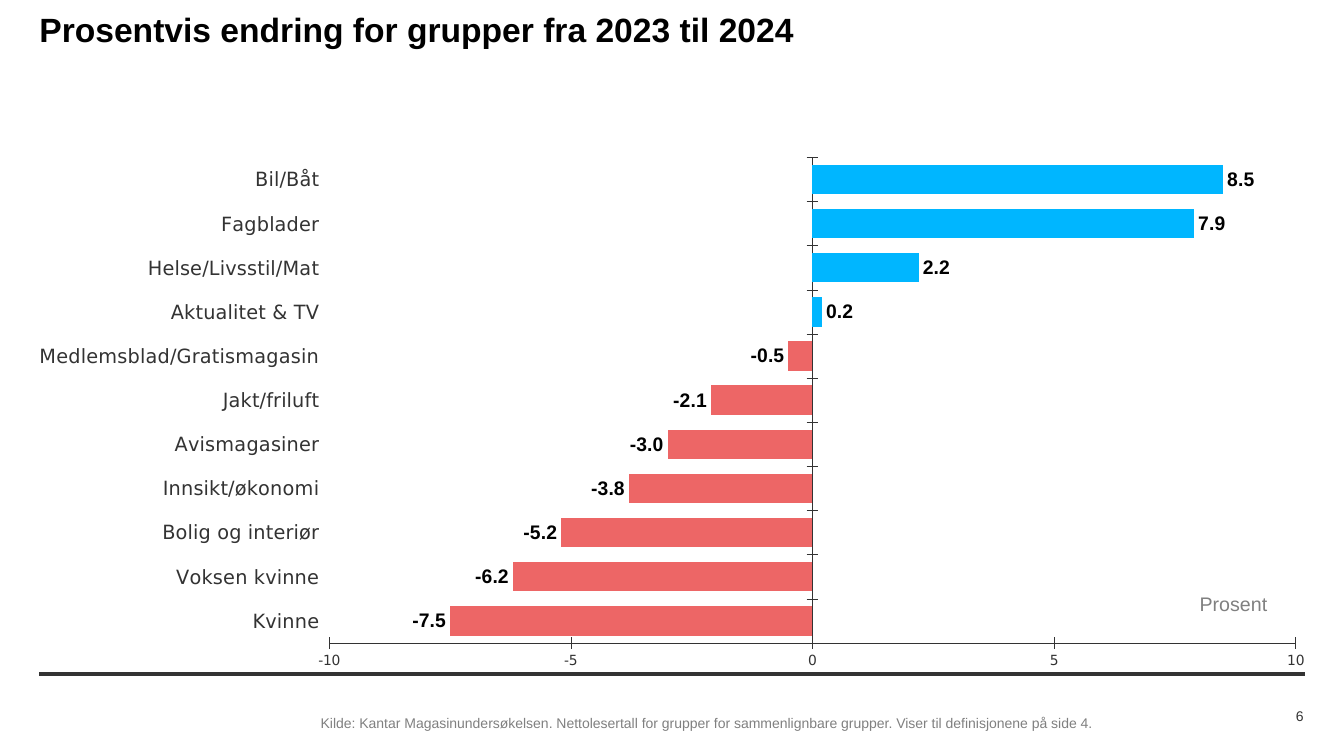
from lxml import etree
from pptx import Presentation
from pptx import util as u
from pptx.chart.data import CategoryChartData
from pptx.dml.color import RGBColor
from pptx.enum import chart as ch, shapes, text
from pptx.oxml import parse_xml
from pptx.oxml.ns import nsdecls, qn

BLACK = RGBColor(0x00, 0x00, 0x00)
DARK = RGBColor(0x33, 0x33, 0x33)
GREY = RGBColor(0x80, 0x80, 0x80)
WHITE = RGBColor(0xFF, 0xFF, 0xFF)
RISE = RGBColor(0x00, 0xB6, 0xFF)
FALL = RGBColor(0xED, 0x66, 0x66)

LEFT, RIGHT = 2.93, 97.07  # slide margins, in percent of the width

CHANGES = [
    ("Kvinne", -7.5),
    ("Voksen kvinne", -6.2),
    ("Bolig og interiør", -5.2),
    ("Innsikt/økonomi", -3.8),
    ("Avismagasiner", -3.0),
    ("Jakt/friluft", -2.1),
    ("Medlemsblad/Gratismagasin", -0.5),
    ("Aktualitet & TV", 0.2),
    ("Helse/Livsstil/Mat", 2.2),
    ("Fagblader", 7.9),
    ("Bil/Båt", 8.5),
]


class Deck:
    """Holds the style and the current slide; lengths are percent of its size."""

    font = "Arial"
    chart_font = "DejaVu Sans"

    def __init__(self):
        self.prs = Presentation()
        self.prs.slide_width = u.Inches(13.33)
        self.prs.slide_height = u.Inches(7.5)
        self.s = self.prs.slides.add_slide(self.prs.slide_layouts[5])

    def x(self, share):
        return int(self.prs.slide_width * share / 100)

    def y(self, share):
        return int(self.prs.slide_height * share / 100)

    def box(self, left, top, width, height):
        return self.x(left), self.y(top), self.x(width), self.y(height)

    def style(self, font, name, size, color, bold=False):
        font.name, font.size, font.bold = name, u.Pt(size), bold
        font.color.rgb = color

    def fill_text(self, sp, words, size, color, bold=False, inset=False,
                  anchor=text.MSO_ANCHOR.MIDDLE, align=text.PP_ALIGN.LEFT):
        tf = sp.text_frame
        tf.word_wrap = True
        tf.auto_size = text.MSO_AUTO_SIZE.NONE
        tf.vertical_anchor = anchor
        if not inset:
            tf.margin_left = tf.margin_right = tf.margin_top = tf.margin_bottom = 0
        p = tf.paragraphs[0]
        p.alignment = align
        r = p.add_run()
        r.text = words
        self.style(r.font, self.font, size, color, bold)

    def title(self, words, *box):
        sp = self.s.shapes.title
        sp.left, sp.top, sp.width, sp.height = self.box(*box)
        self.fill_text(sp, words, 24, BLACK, True, anchor=text.MSO_ANCHOR.TOP)

    def label(self, words, *box, **look):
        self.fill_text(self.s.shapes.add_textbox(*self.box(*box)), words, **look)

    def rule(self, left, right, top, weight):
        line = self.s.shapes.add_connector(
            shapes.MSO_CONNECTOR.STRAIGHT,
            self.x(left), self.y(top), self.x(right), self.y(top))
        line.line.color.rgb = DARK
        line.line.width = u.Pt(weight)
        etree.SubElement(line._element.spPr, qn("a:effectLst"))

    def axis(self, axis, size):
        axis.has_major_gridlines = False
        axis.major_tick_mark = ch.XL_TICK_MARK.CROSS
        axis.minor_tick_mark = ch.XL_TICK_MARK.NONE
        axis.format.line.color.rgb = DARK
        axis.format.line.width = u.Pt(0.39)
        self.style(axis.tick_labels.font, self.chart_font, size, DARK)

    def bars(self, rows, *box):
        data = CategoryChartData(number_format="0.0")
        data.categories = [name for name, _ in rows]
        data.add_series("Series 1", [value for _, value in rows])
        chart = self.s.shapes.add_chart(
            ch.XL_CHART_TYPE.BAR_CLUSTERED, *self.box(*box), data).chart
        chart.has_legend = chart.has_title = False
        self.style(chart.font, self.chart_font, 9.5, DARK)

        # Axes
        self.axis(chart.category_axis, 14)
        chart.category_axis.tick_label_position = ch.XL_TICK_LABEL_POSITION.LOW
        value_axis = chart.value_axis
        self.axis(value_axis, 10)
        value_axis.minimum_scale, value_axis.maximum_scale = -10, 10
        value_axis.major_unit = 5
        value_axis.tick_labels.number_format = "0"
        value_axis.tick_labels.number_format_is_linked = False

        # Bars, coloured by sign
        plot = chart.plots[0]
        plot.gap_width = 50
        plot.vary_by_categories = False
        series = plot.series[0]
        series.invert_if_negative = False
        series.format.fill.solid()
        series.format.fill.fore_color.rgb = FALL
        for i, (_, value) in enumerate(rows):
            if value > 0:
                fill = series.points[i].format.fill
                fill.solid()
                fill.fore_color.rgb = RISE

        # Value labels
        labels = series.data_labels
        labels.show_value = True
        labels.number_format = "0.0"
        labels.number_format_is_linked = False
        labels.position = ch.XL_LABEL_POSITION.OUTSIDE_END
        self.style(labels.font, self.font, 14, BLACK, True)

        # Fixed inner plot area
        area = chart._chartSpace.chart.plotArea
        for old in area.findall(qn("c:layout")):
            area.remove(old)
        places = "".join(f'<c:{tag} val="{val}"/>' for tag, val in (
            ("layoutTarget", "inner"), ("xMode", "edge"), ("yMode", "edge"),
            ("x", 0.217), ("y", 0), ("w", 0.776), ("h", 0.945)))
        area.insert(0, parse_xml(
            f'<c:layout {nsdecls("c")}><c:manualLayout>{places}'
            "</c:manualLayout></c:layout>"))
        area.append(parse_xml(
            f'<c:spPr {nsdecls("c", "a")}><a:solidFill>'
            f'<a:srgbClr val="{WHITE}"/></a:solidFill></c:spPr>'))


def main():
    deck = Deck()

    # Title and bottom rule
    deck.rule(LEFT, RIGHT, 89.2, 3)
    deck.title("Prosentvis endring for grupper fra 2023 til 2024",
               LEFT, 1.2, 96.92, 5.87)

    # Change per group
    deck.bars(CHANGES, LEFT, 20.8, RIGHT - LEFT, 68)
    deck.label("Prosent", 88.52, 77.6, 10.13, 4.53, size=14, color=GREY,
               inset=True, anchor=text.MSO_ANCHOR.TOP)

    # Source and page number
    deck.label("Kilde: Kantar Magasinundersøkelsen. Nettolesertall for grupper "
               "for sammenlignbare grupper. Viser til definisjonene på side 4.",
               23.86, 92.93, 62.49, 5.47, size=10, color=GREY)
    deck.label("6", 89.05, 93.2, 7.95, 2.93, size=10, color=DARK,
               align=text.PP_ALIGN.RIGHT)

    deck.prs.save("out.pptx")


if __name__ == "__main__":
    main()
